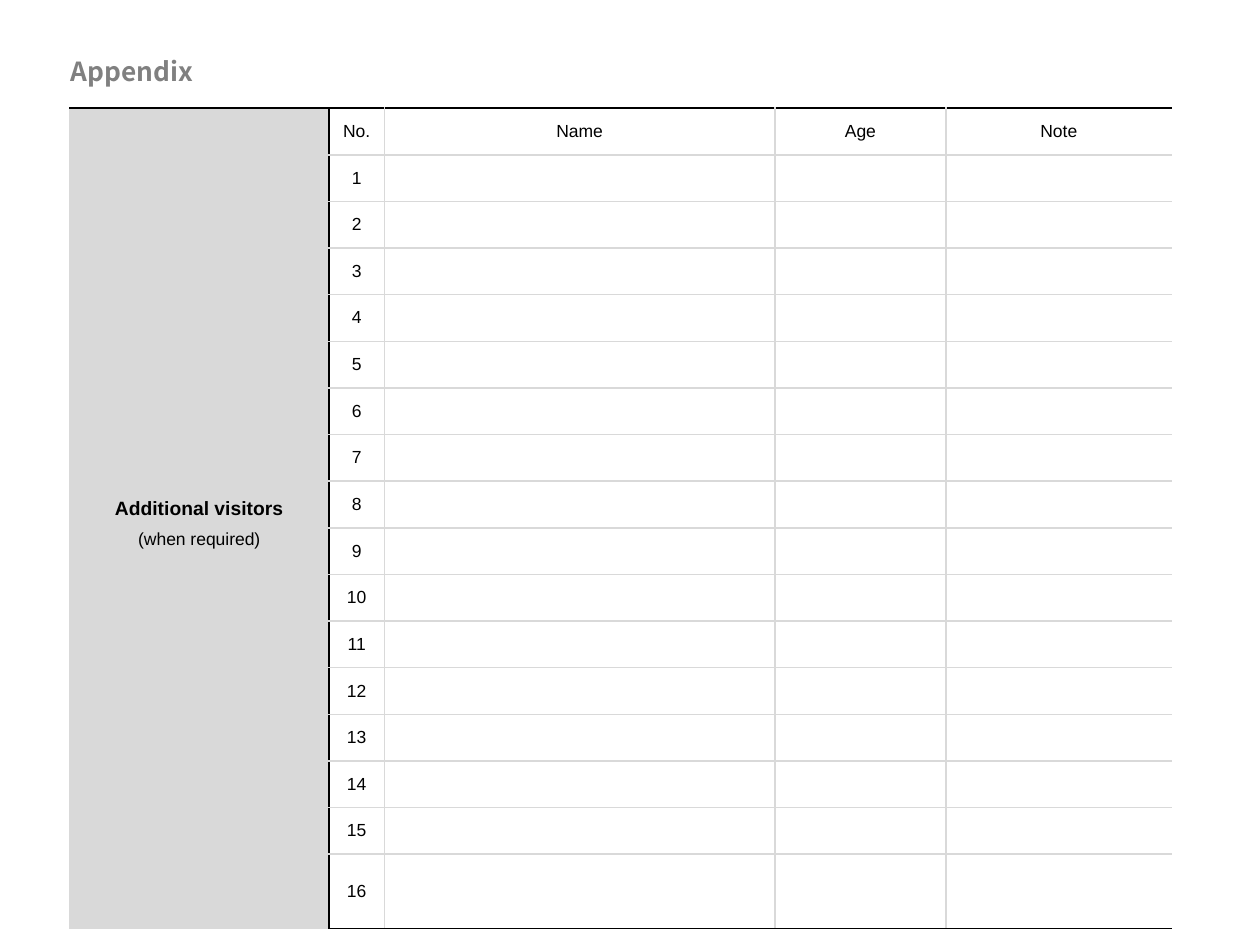
from dataclasses import dataclass

from lxml.etree import SubElement
from pptx import Presentation
from pptx.dml.color import RGBColor
from pptx.enum.text import MSO_ANCHOR, MSO_AUTO_SIZE, PP_ALIGN
from pptx.oxml.ns import qn
from pptx.util import Cm, Pt

HEADING = "Appendix"
GROUP_LABEL = ["Additional visitors", "(when required)"]
COLUMNS = [("No.", 1.12), ("Name", 7.87), ("Age", 3.45), ("Note", 4.55)]
GROUP_WIDTH = 5.23
VISITOR_COUNT = 16
ROW_HEIGHT = 0.94
TABLE_LEFT, TABLE_TOP = 1.4, 2.18


@dataclass(frozen=True)
class Theme:
    heading_font: str = "Noto Sans CJK KR"
    body_font: str = "Arial"
    heading_size: float = 15
    label_size: float = 11
    body_size: float = 10
    heading: str = "808080"
    ink: str = "000000"
    grid: str = "D9D9D9"
    line: float = 1
    hairline: float = 0.25


THEME = Theme()


def style_text(paragraph, font, size, color, bold=False):
    for run in paragraph.runs:
        run.font.name = font
        run.font.size = Pt(size)
        run.font.bold = bold
        run.font.color.rgb = RGBColor.from_string(color)


def fill_cell(cell, lines):
    cell.text_frame.text = "\n".join(lines)
    cell.vertical_anchor = MSO_ANCHOR.MIDDLE
    for paragraph in cell.text_frame.paragraphs:
        paragraph.alignment = PP_ALIGN.CENTER
        style_text(paragraph, THEME.body_font, THEME.body_size, THEME.ink)


def set_border(cell, side, border):
    """Draw one side (L, R, T or B) as (colour, points), or hide it with None."""
    edge = SubElement(cell._tc.get_or_add_tcPr(), qn(f"a:ln{side}"))
    if border is None:
        SubElement(edge, qn("a:noFill"))
        return
    color, points = border
    edge.set("w", str(Pt(points)))
    SubElement(SubElement(edge, qn("a:solidFill")), qn("a:srgbClr")).set("val", color)


def add_heading(slide):
    title = slide.shapes.title
    title.left, title.top, title.width, title.height = Cm(1.17), Cm(0.99), Cm(4.11), Cm(0.89)
    frame = title.text_frame
    frame.text = HEADING
    frame.auto_size = MSO_AUTO_SIZE.NONE
    frame.vertical_anchor = MSO_ANCHOR.MIDDLE
    frame.paragraphs[0].alignment = PP_ALIGN.LEFT
    style_text(frame.paragraphs[0], THEME.heading_font, THEME.heading_size, THEME.heading, bold=True)


def draw_grid(table):
    strong, soft = (THEME.ink, THEME.line), (THEME.grid, THEME.line)
    hairline = (THEME.grid, THEME.hairline)
    verticals = [None, strong, hairline, soft, soft, None]
    for row in range(VISITOR_COUNT + 1):
        for column in range(len(COLUMNS) + 1):
            cell = table.cell(row, column)
            borders = {
                "L": verticals[column],
                "R": verticals[column + 1],
                "T": strong if row == 0 else soft,
                "B": strong if row == VISITOR_COUNT else soft,
            }
            for side, border in borders.items():
                set_border(cell, side, border)
            if column == 0:
                cell.fill.solid()
                cell.fill.fore_color.rgb = RGBColor.from_string(THEME.grid)
            else:
                cell.fill.background()
            if not cell.is_merge_origin:
                cell.margin_top = cell.margin_bottom = 0


def add_visitor_table(slide):
    widths = [GROUP_WIDTH] + [width for _, width in COLUMNS]
    row_count = VISITOR_COUNT + 1
    table = slide.shapes.add_table(
        row_count, len(widths), Cm(TABLE_LEFT), Cm(TABLE_TOP),
        Cm(sum(widths)), Cm(ROW_HEIGHT * row_count),
    ).table
    table.first_row = table.horz_banding = False
    for column, width in zip(table.columns, widths):
        column.width = Cm(width)
    for row in table.rows:
        row.height = Cm(ROW_HEIGHT)

    group = table.cell(0, 0)
    group.merge(table.cell(VISITOR_COUNT, 0))
    fill_cell(group, GROUP_LABEL)
    for paragraph in group.text_frame.paragraphs:
        paragraph.line_spacing = 1.5
    style_text(group.text_frame.paragraphs[0], THEME.body_font, THEME.label_size, THEME.ink, bold=True)

    for index, (header, _) in enumerate(COLUMNS, start=1):
        fill_cell(table.cell(0, index), [header])
    for number in range(1, row_count):
        fill_cell(table.cell(number, 1), [str(number)])
    draw_grid(table)


def main():
    presentation = Presentation()
    presentation.slide_width, presentation.slide_height = Cm(25.4), Cm(19.05)
    slide = presentation.slides.add_slide(presentation.slide_layouts.get_by_name("Title Only"))
    add_heading(slide)
    add_visitor_table(slide)
    presentation.save("out.pptx")


if __name__ == "__main__":
    main()
